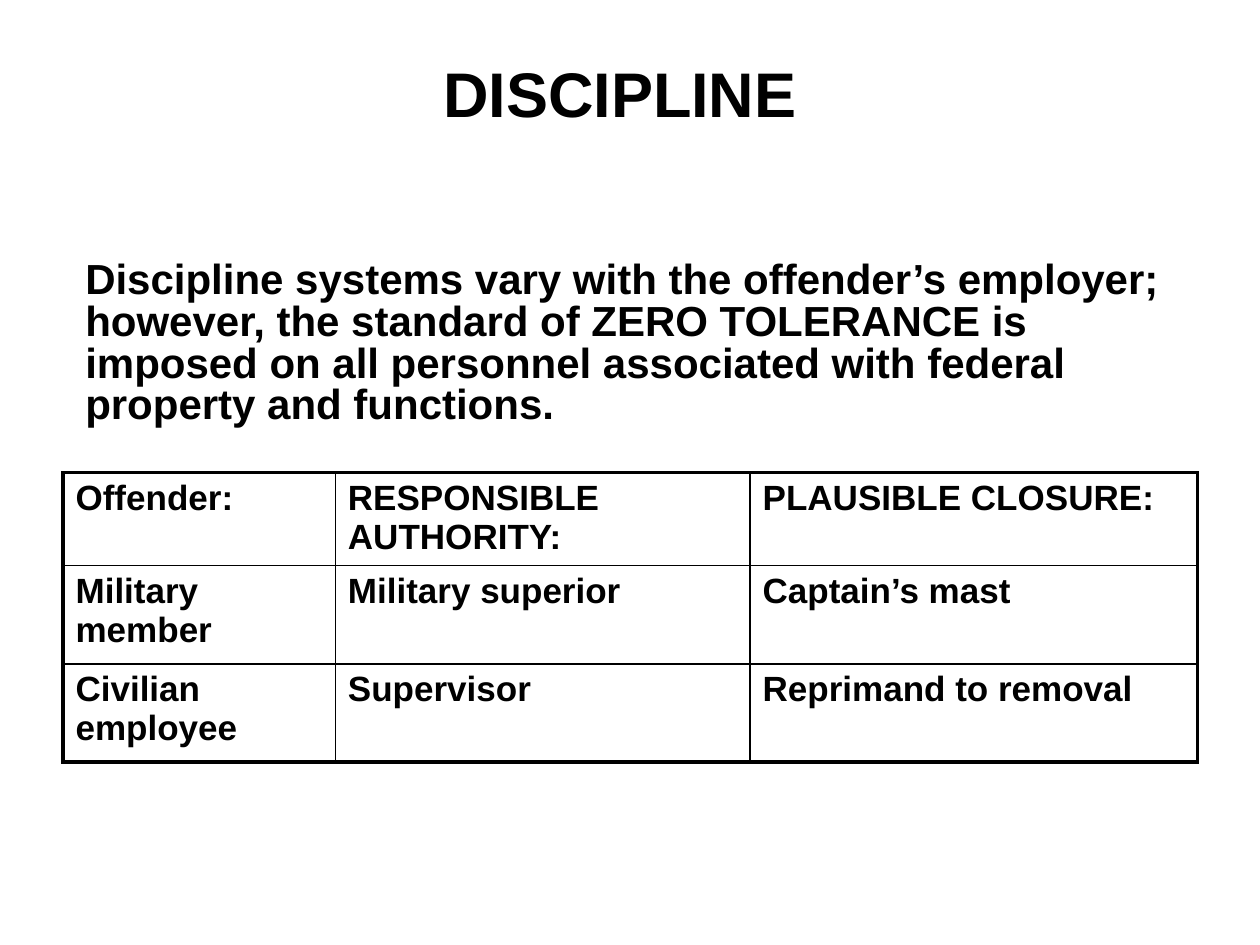
from lxml.etree import SubElement
from pptx import Presentation
from pptx.dml.color import RGBColor
from pptx.enum.text import MSO_ANCHOR, PP_ALIGN
from pptx.oxml.ns import qn
from pptx.util import Cm, Pt

HEADING = "DISCIPLINE"
STATEMENT = (
    "Discipline systems vary with the offender’s employer; however, the standard of "
    "ZERO TOLERANCE is imposed on all personnel associated with federal property and functions."
)
AUTHORITIES = [
    ("Offender:", "RESPONSIBLE AUTHORITY:", "PLAUSIBLE CLOSURE:"),
    ("Military member", "Military superior", "Captain’s mast"),
    ("Civilian employee", "Supervisor", "Reprimand to removal"),
]
COLUMN_WIDTHS = (5.49, 8.36, 9.02)
ROW_HEIGHTS = (1.83, 1.98, 1.98)
INK = "000000"
OUTER, INNER = 2.25, 1


def color(value):
    return RGBColor.from_string(value)


def style(frame, size):
    for paragraph in frame.paragraphs:
        for run in paragraph.runs:
            run.font.name = "Arial"
            run.font.size = Pt(size)
            run.font.bold = True
            run.font.color.rgb = color(INK)


def add_text(slide, text, box, size, insets):
    frame = slide.shapes.add_textbox(*map(Cm, box)).text_frame
    frame.word_wrap = True
    frame.margin_top, frame.margin_bottom = map(Cm, insets)
    frame.text = text
    style(frame, size)
    return frame


def add_borders(cell, edges):
    properties = cell._tc.get_or_add_tcPr()
    for side, outside in edges.items():
        width = Pt(OUTER if outside else INNER)
        border = SubElement(properties, qn(f"a:ln{side}"), w=str(width))
        SubElement(SubElement(border, qn("a:solidFill")), qn("a:srgbClr"), val=INK)


def add_authorities(slide):
    rows, columns = len(ROW_HEIGHTS), len(COLUMN_WIDTHS)
    table = slide.shapes.add_table(
        rows, columns, Cm(1.27), Cm(9.53), Cm(sum(COLUMN_WIDTHS)), Cm(sum(ROW_HEIGHTS))
    ).table
    table.first_row = table.horz_banding = False
    for column, width in zip(table.columns, COLUMN_WIDTHS):
        column.width = Cm(width)
    for r, (height, entries) in enumerate(zip(ROW_HEIGHTS, AUTHORITIES)):
        table.rows[r].height = Cm(height)
        for c, entry in enumerate(entries):
            cell = table.cell(r, c)
            cell.text_frame.text = entry
            style(cell.text_frame, 20)
            cell.margin_bottom = Cm(0.05)
            add_borders(cell, {"L": c == 0, "R": c == columns - 1, "T": r == 0, "B": r == rows - 1})
            cell.fill.background()


def main():
    """Build the discipline slide and save it."""
    deck = Presentation()
    deck.slide_width, deck.slide_height = Cm(25.4), Cm(19.05)
    slide = deck.slides.add_slide(deck.slide_layouts[6])

    heading = add_text(slide, HEADING, (1.07, 1.07, 22.86, 2.41), 36, (0, 0.84))
    heading.vertical_anchor = MSO_ANCHOR.MIDDLE
    heading.paragraphs[0].alignment = PP_ALIGN.CENTER

    statement = add_text(slide, STATEMENT, (1.47, 5.08, 22.43, 3.18), 24, (0.18, 0.13))
    statement.paragraphs[0].line_spacing = 0.83

    add_authorities(slide)
    deck.save("out.pptx")


if __name__ == "__main__":
    main()
